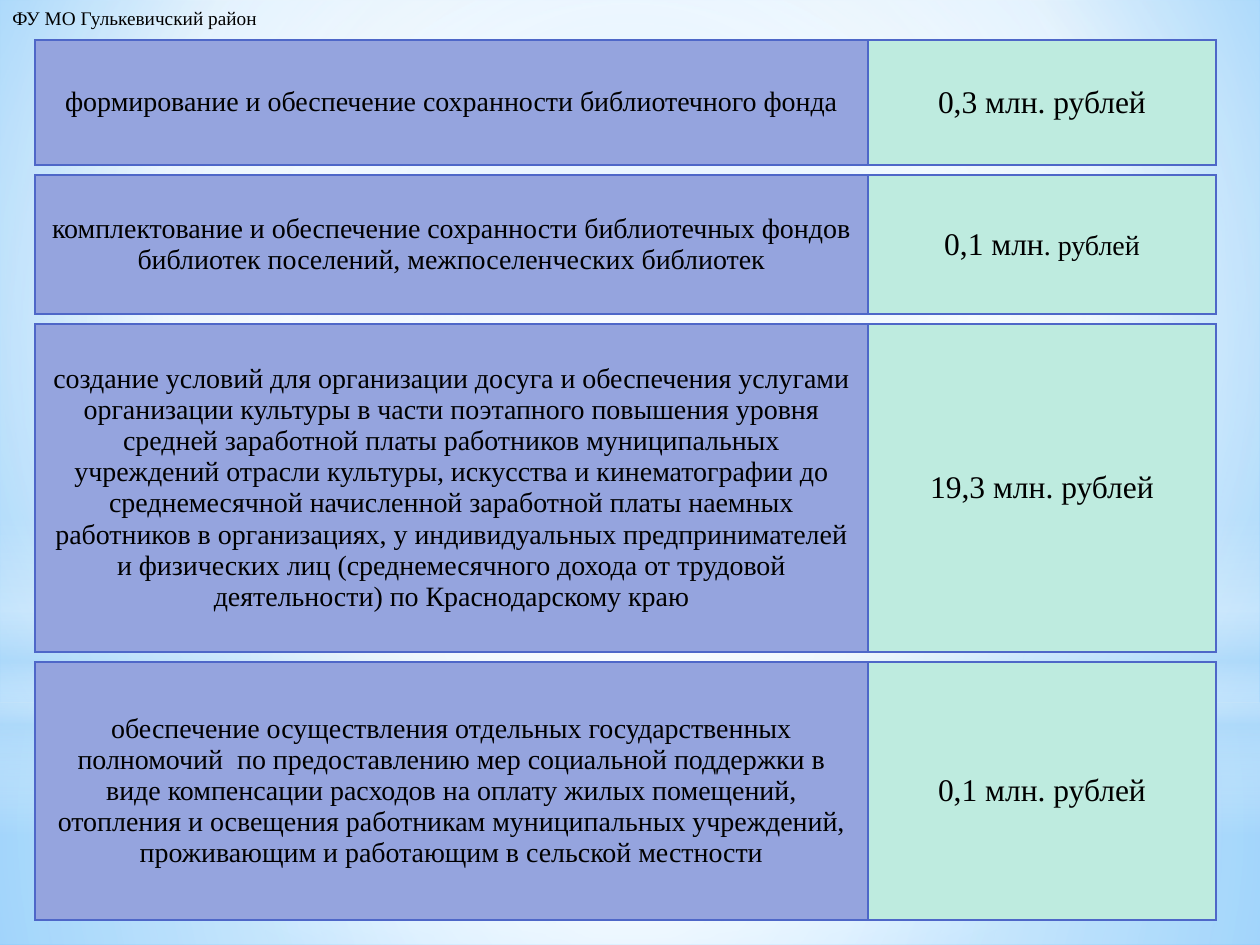
from dataclasses import dataclass

from lxml import etree
from pptx import Presentation
from pptx.dml.color import RGBColor
from pptx.enum.shapes import MSO_SHAPE
from pptx.enum.text import MSO_ANCHOR, MSO_AUTO_SIZE, PP_ALIGN
from pptx.oxml import parse_xml
from pptx.oxml.ns import nsdecls, qn
from pptx.util import Emu, Pt

RECT, OVAL = MSO_SHAPE.RECTANGLE, MSO_SHAPE.OVAL
MIDDLE, CENTER = MSO_ANCHOR.MIDDLE, PP_ALIGN.CENTER


@dataclass(frozen=True)
class Theme:
    font: str = "Times New Roman"
    text: str = "000000"
    purpose_fill: str = "95A4DE"
    amount_fill: str = "BEEBDF"
    border: str = "4E67C8"
    white: str = "FFFFFF"
    haze: str = "B4DCFA"
    sky: str = "9ED5FF"
    deep_sky: str = "5BB9FF"
    header_size: int = 11
    purpose_size: int = 16
    amount_size: int = 18


T = Theme()

HEADER = "ФУ МО Гулькевичский район"

# row height in px, purpose, runs of the amount as (text, size)
ROWS = [
    (125, "формирование и обеспечение сохранности библиотечного фонда",
     [("0,3 млн. рублей", T.amount_size)]),
    (139, "комплектование и обеспечение сохранности библиотечных фондов "
          "библиотек поселений, межпоселенческих библиотек",
     [("0,1 млн", T.amount_size), (". рублей", T.purpose_size)]),
    (328, "создание условий для организации досуга и обеспечения услугами "
          "организации культуры в части поэтапного повышения уровня средней "
          "заработной платы работников муниципальных учреждений отрасли культуры, "
          "искусства и кинематографии до среднемесячной начисленной заработной "
          "платы наемных работников в организациях, у индивидуальных "
          "предпринимателей и физических лиц (среднемесячного дохода от трудовой "
          "деятельности) по Краснодарскому краю",
     [("19,3 млн. рублей", T.amount_size)]),
    (258, "обеспечение осуществления отдельных государственных полномочий  по "
          "предоставлению мер социальной поддержки в виде компенсации расходов на "
          "оплату жилых помещений, отопления и освещения работникам муниципальных "
          "учреждений, проживающим и работающим в сельской местности",
     [("0,1 млн. рублей", T.amount_size)]),
]

SLIDE_W, SLIDE_H = 1260, 945
LEFT, TOP, GAP = 35, 40, 10
COLUMNS = (833, 348)

# gradient stops: position %, colour, opacity %
SKY_STOPS = [(0, T.sky, 100), (60, T.white, 100), (100, T.deep_sky, 100)]
SKY_FOCUS = (20, 10, 20, 60)
MID_FOCUS = (50, 50, 50, 50)

# preset, top and height in px, stops, focus (None: vertical gradient)
GLOWS = [
    (RECT, 703, 242, [(0, T.white, 91), (37, T.white, 76), (100, T.haze, 79)], MID_FOCUS),
    (RECT, 0, 703, [(0, T.white, 89), (48, T.white, 62), (100, T.haze, 79)], MID_FOCUS),
    (RECT, 519, 315, [(0, T.white, 0), (29, T.white, 30), (45, T.haze, 40),
                      (55, T.white, 26), (65, T.haze, 60), (100, T.white, 0)], None),
    (OVAL, 221, 703, [(0, T.white, 100), (56, T.white, 0)], MID_FOCUS),
]


def px(n):
    return Emu(round(n * 914400 / 126))


def set_gradient(parent, stops, focus):
    """Replace the solid fill inside parent by a gradient."""
    gs = "".join(
        f'<a:gs pos="{pos * 1000}"><a:srgbClr val="{color}">'
        f'<a:alpha val="{alpha * 1000}"/></a:srgbClr></a:gs>'
        for pos, color, alpha in stops)
    if focus:
        l, t, r, b = (n * 1000 for n in focus)
        shade = (f'<a:path path="circle"><a:fillToRect l="{l}" t="{t}" '
                 f'r="{r}" b="{b}"/></a:path>')
    else:
        shade = '<a:lin ang="5400000" scaled="0"/>'
    grad = parse_xml(f'<a:gradFill {nsdecls("a")} rotWithShape="1">'
                     f'<a:gsLst>{gs}</a:gsLst>{shade}</a:gradFill>')
    parent.replace(parent.find(qn("a:solidFill")), grad)


def add_background(slide):
    slide.background.fill.solid()
    set_gradient(slide.element.find(".//" + qn("p:bgPr")), SKY_STOPS, SKY_FOCUS)
    for preset, top, height, stops, focus in GLOWS:
        sp = slide.shapes.add_shape(preset, 0, px(top), px(SLIDE_W), px(height))
        sp.shadow.inherit = False
        sp.line.fill.background()
        sp.fill.solid()
        set_gradient(sp.element.spPr, stops, focus)


def write(p, runs):
    for text, size in runs:
        r = p.add_run()
        r.text = text
        r.font.name = T.font
        r.font.size = Pt(size)
        r.font.color.rgb = RGBColor.from_string(T.text)


def set_borders(cell):
    tc_pr = cell._tc.get_or_add_tcPr()
    for side in ("lnL", "lnR", "lnT", "lnB"):
        ln = etree.SubElement(tc_pr, qn(f"a:{side}"), w=str(Pt(1)))
        fill = etree.SubElement(ln, qn("a:solidFill"))
        etree.SubElement(fill, qn("a:srgbClr"), val=T.border)


def add_row_table(slide, top, height, purpose, amount):
    table = slide.shapes.add_table(1, len(COLUMNS), px(LEFT), px(top),
                                   px(sum(COLUMNS)), px(height)).table
    table.first_row = table.horz_banding = False
    contents = [([(purpose, T.purpose_size)], T.purpose_fill),
                (amount, T.amount_fill)]
    for i, (width, (runs, fill)) in enumerate(zip(COLUMNS, contents)):
        table.columns[i].width = px(width)
        cell = table.cell(0, i)
        set_borders(cell)
        cell.fill.solid()
        cell.fill.fore_color.rgb = RGBColor.from_string(fill)
        cell.vertical_anchor = MIDDLE
        p = cell.text_frame.paragraphs[0]
        p.alignment = CENTER
        write(p, runs)


def add_header(slide):
    tf = slide.shapes.add_textbox(0, 0, px(275), px(36)).text_frame
    tf.word_wrap = False
    tf.auto_size = MSO_AUTO_SIZE.SHAPE_TO_FIT_TEXT
    write(tf.paragraphs[0], [(HEADER, T.header_size)])


def main():
    prs = Presentation()
    prs.slide_width, prs.slide_height = px(SLIDE_W), px(SLIDE_H)
    slide = prs.slides.add_slide(prs.slide_layouts[6])
    add_background(slide)
    add_header(slide)
    top = TOP
    for height, purpose, amount in ROWS:
        add_row_table(slide, top, height, purpose, amount)
        top += height + GAP
    prs.save("out.pptx")


if __name__ == "__main__":
    main()
